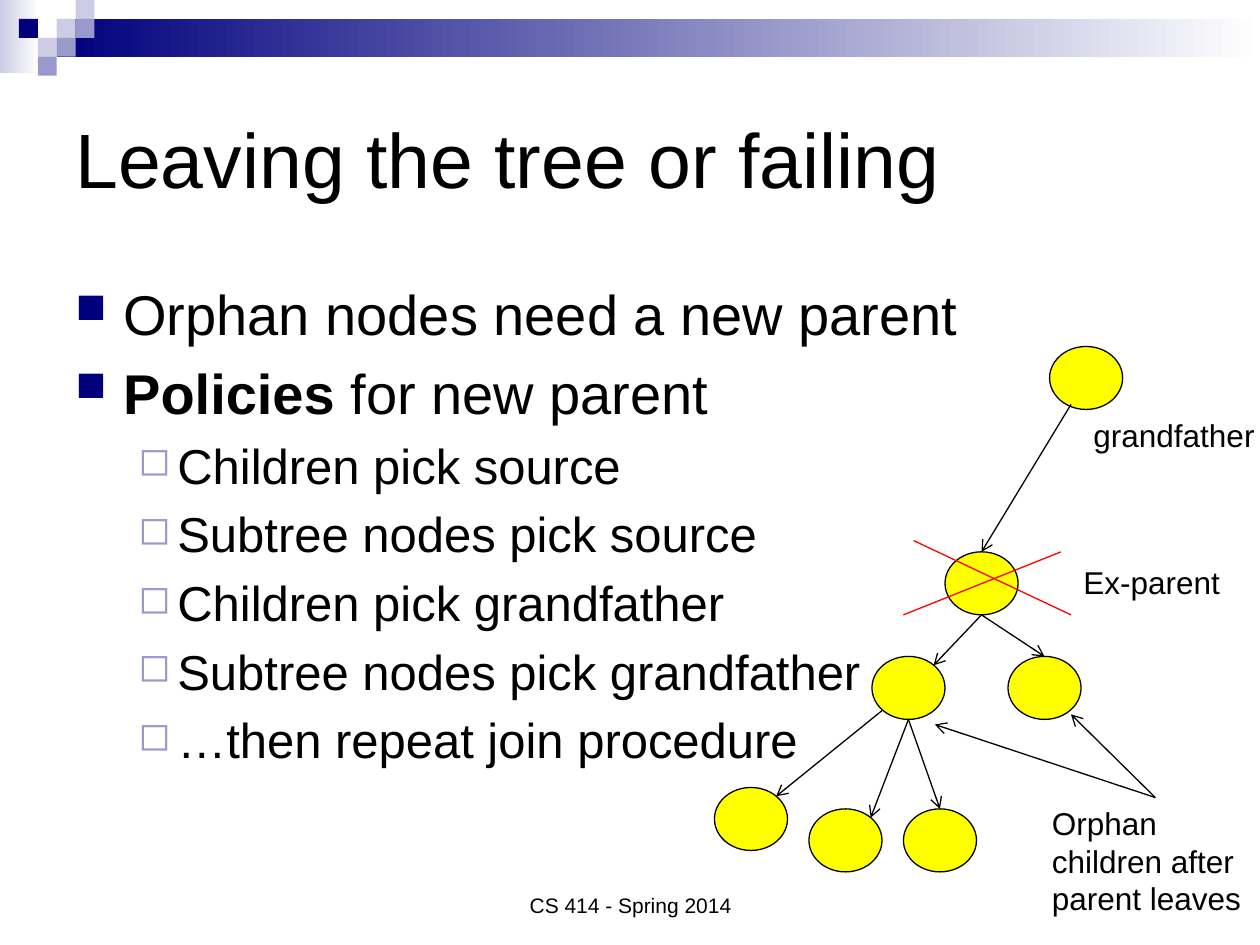
from lxml import etree
from pptx import Presentation, util as u
from pptx.dml.color import RGBColor
from pptx.enum import shapes, text
from pptx.oxml.ns import qn

INK = {"navy": "00007D", "mid": "9999CC", "pale": "CCCCE6", "white": "FFFFFF",
       "black": "000000", "node": "FFFF00", "cross": "FF0000"}
CELL = 0.15
NODE = (0.58, 0.5)
SQUARES = [(3, 1, "pale"), (4, 0, "pale"), (4, 1, "mid"), (2, 2, "pale"),
           (1, 1, "navy"), (3, 2, "mid"), (2, 3, "mid")]
NODES = {"grand": (8.33, 2.75), "parent": (7.5, 4.38), "left": (6.92, 5.21),
         "right": (8, 5.21), "leaf1": (5.67, 6.25), "leaf2": (6.42, 6.42),
         "leaf3": (7.17, 6.42)}
ARROWS = [((8.5, 3.21), (7.79, 4.38), "parent"), ((7.79, 4.88), (7.41, 5.28), None),
          ((7.79, 4.88), (8.29, 5.21), "right"), ((7, 5.64), (6.16, 6.32), None),
          ((7.21, 5.71), (6.91, 6.49), None), ((7.21, 5.71), (7.46, 6.42), "leaf3"),
          ((9.17, 6.33), (8.5, 5.67), None), ((9.17, 6.33), (7.42, 5.75), None)]
CROSS = [((7.25, 4.29), (8.5, 4.88)), ((8.42, 4.38), (7.17, 4.88))]
LEVELS = [{"size": 32, "left": 0.38, "hang": 0.38, "mark": "■", "ink": "navy", "scale": 75},
          {"size": 28, "left": 0.81, "hang": 0.31, "mark": "◻", "ink": "mid", "scale": 80}]
POINTS = [(0, "", "Orphan nodes need a new parent"),
          (0, "Policies", " for new parent"),
          (1, "", "Children pick source"),
          (1, "", "Subtree nodes pick source"),
          (1, "", "Children pick grandfather"),
          (1, "", "Subtree nodes pick grandfather"),
          (1, "", "…then repeat join procedure")]


def color(name):
    """Return the named colour."""
    return RGBColor.from_string(INK[name])


def shape(slide, kind, box, fill, line=None):
    """Add a preset shape; a pair of fills makes a gradient."""
    item = slide.shapes.add_shape(kind, *map(u.Inches, box))
    item.shadow.inherit = False
    if isinstance(fill, tuple):
        item.fill.gradient()
        item.fill.gradient_angle = 0
        for stop, name, place in zip(item.fill.gradient_stops, fill, (0, 1)):
            stop.color.rgb = color(name)
            stop.position = place
    else:
        item.fill.solid()
        item.fill.fore_color.rgb = color(fill)
    if line:
        item.line.color.rgb = color(line)
        item.line.width = u.Pt(0.75)
    else:
        item.line.fill.background()
    return item


def link(slide, start, end, ink="black", arrow=False, node=None):
    """Add a straight line, with an optional arrowhead and node joined at its top."""
    item = slide.shapes.add_connector(
        shapes.MSO_CONNECTOR.STRAIGHT, *map(u.Inches, start + end))
    if node is not None:
        item.end_connect(node, 0)
    item.line.color.rgb = color(ink)
    item.line.width = u.Pt(0.75)
    if arrow:
        etree.SubElement(item.line._get_or_add_ln(), qn("a:tailEnd"), type="arrow")
    etree.SubElement(item._element.spPr, qn("a:effectLst"))


def style(para, size):
    """Format every run of a paragraph."""
    for run in para.runs:
        run.font.name = "Arial"
        run.font.size = u.Pt(size)
        run.font.color.rgb = color("black")


def label(slide, box, words, size, anchor="TOP", align="LEFT", wrap=True):
    """Add a text box with one paragraph."""
    frame = slide.shapes.add_textbox(*map(u.Inches, box)).text_frame
    frame.word_wrap = wrap
    frame.vertical_anchor = text.MSO_ANCHOR[anchor]
    frame.text = words
    para = frame.paragraphs[0]
    para.alignment = text.PP_ALIGN[align]
    style(para, size)
    return frame


def bullet(para, level):
    """Give a paragraph its indent, spacing and bullet mark."""
    look = LEVELS[level]
    para.level = level
    props = para._p.get_or_add_pPr()
    props.set("marL", str(u.Inches(look["left"])))
    props.set("indent", str(-u.Inches(look["hang"])))
    space = etree.SubElement(props, qn("a:spcBef"))
    etree.SubElement(space, qn("a:spcPct"), val="20000")
    tint = etree.SubElement(props, qn("a:buClr"))
    etree.SubElement(tint, qn("a:srgbClr"), val=INK[look["ink"]])
    etree.SubElement(props, qn("a:buSzPct"), val=str(look["scale"] * 1000))
    etree.SubElement(props, qn("a:buChar"), char=look["mark"])


def outline(slide, box):
    """Add the bulleted list."""
    frame = slide.shapes.add_textbox(*map(u.Inches, box)).text_frame
    frame.word_wrap = True
    for i, (level, bold, rest) in enumerate(POINTS):
        para = frame.add_paragraph() if i else frame.paragraphs[0]
        bullet(para, level)
        if bold:
            run = para.add_run()
            run.text = bold
            run.font.bold = True
        para.add_run().text = rest
        style(para, LEVELS[level]["size"])


def banner(slide):
    """Add the gradient bars and the checkered corner."""
    rect = shapes.MSO_SHAPE.RECTANGLE
    shape(slide, rect, (0, 0, 0.31, 0.58), ("pale", "white"))
    shape(slide, rect, (0.45, 0.15, 9.55, 0.3), ("navy", "white"))
    for col, row, ink in SQUARES:
        shape(slide, rect, (col * CELL, row * CELL, CELL, CELL), ink)


def tree(slide):
    """Add the nodes, arrows, cross and labels of the tree."""
    nodes = {name: shape(slide, shapes.MSO_SHAPE.OVAL, spot + NODE, "node", "black")
             for name, spot in NODES.items()}
    for start, end, name in ARROWS:
        link(slide, start, end, arrow=True, node=nodes.get(name))
    for start, end in CROSS:
        link(slide, start, end, "cross")
    label(slide, (8.25, 6.33, 1.83, 1.01), "Orphan children after parent leaves", 18)
    label(slide, (8.5, 4.42, 1.3, 0.4), "Ex-parent", 18, wrap=False)
    label(slide, (8.58, 3.25, 1.49, 0.4), "grandfather", 18, wrap=False)


def main():
    """Build and save the slide."""
    deck = Presentation()
    deck.slide_width, deck.slide_height = u.Inches(10), u.Inches(7.5)
    slide = deck.slides.add_slide(deck.slide_layouts[6])
    banner(slide)
    label(slide, (0.5, 0.5, 9, 1.5), "Leaving the tree or failing", 44, "MIDDLE")
    outline(slide, (0.5, 2.17, 9, 4.25))
    label(slide, (3.42, 6.83, 3.17, 0.5), "CS 414 - Spring 2014", 12, "BOTTOM", "CENTER")
    tree(slide)
    deck.save("out.pptx")


if __name__ == "__main__":
    main()
